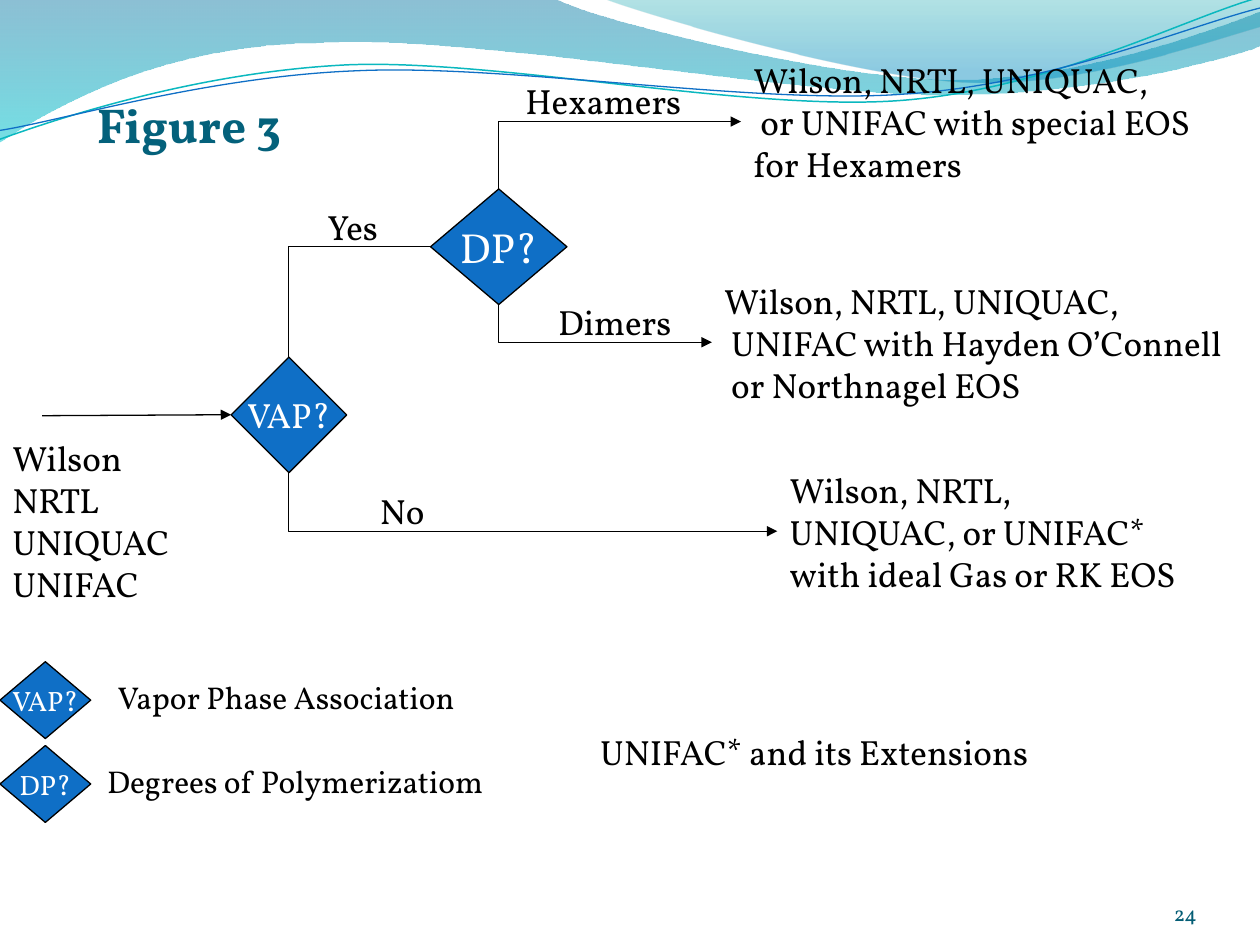
from lxml.etree import SubElement
from pptx import Presentation
from pptx.dml.color import RGBColor
from pptx.enum.shapes import MSO_CONNECTOR, MSO_SHAPE
from pptx.enum.text import MSO_ANCHOR, MSO_AUTO_SIZE, PP_ALIGN
from pptx.oxml.ns import qn
from pptx.util import Cm, Pt

FONT = "Vollkorn"
BLACK, WHITE, BLUE = "000000", "FFFFFF", "0F6FC6"
HUNDREDTH_INCH = Cm(0.0254)
WAVE_TILT = 357.3

# Outlines in hundredths of an inch: a start point, then lines (x, y)
# or cubic curves (two control points and an end point).
BANDS = [
    ([(0, -1), (440, -1), (476, 17, 664, 63, 758, 63),
      (853, 63, 958, 26, 1000, 9), (1001, 36),
      (983, 44, 870, 76, 746, 75), (622, 75, 382, 28, 257, 34),
      (129, 35, 46, 83, -1, 113)],
     [(0, "0074A1", 45), (1, "00C6CF", 55)]),
    ([(479, -1), (509, 11, 682, 62, 769, 65),
      (856, 69, 961, 32, 1000, 21), (1000, 0)],
     [(0, "00A1A9", 30), (0.8, "008BBF", 45)]),
]
WAVES = [  # outline before tilting, colour, line width
    ([(-2, 87), (47, 72, 158, 41, 277, 41), (396, 42, 591, 93, 712, 90),
      (832, 87, 940, 36, 1000, 22)], "0AB8BF", 0.85),
    ([(-2, 80), (46, 75, 164, 45, 283, 46), (403, 46, 596, 88, 716, 85),
      (835, 83, 942, 42, 1002, 30)], BLUE, 0.75),
]

DECISIONS = [  # text, left, top, width, height, size
    ("VAP?", 4.66, 7.2, 2.33, 2.33, 20),
    ("DP?", 8.68, 3.81, 2.75, 2.33, 24),
    ("VAP?", 0, 13.34, 1.83, 1.55, 16),
    ("DP?", 0, 15.03, 1.83, 1.55, 16),
]
BRANCHES = [  # start, end, has arrowhead
    ((5.82, 7.2), (8.68, 4.97), False),
    ((5.82, 9.53), (15.67, 10.71), True),
    ((10.05, 3.81), (14.94, 2.45), True),
    ((10.05, 6.14), (14.35, 6.9), True),
]
LABELS = [  # lines, left, top, width, size
    (["Yes"], 6.35, 4.02, 1.7, 20),
    (["No"], 7.41, 9.74, 1.45, 20),
    (["Hexamers"], 10.34, 1.48, 3.84, 20),
    (["Dimers"], 11, 5.93, 2.84, 20),
    (["Wilson", "NRTL", "UNIQUAC", "UNIFAC"], 0, 8.68, 4.06, 20),
    (["Wilson, NRTL,", "UNIQUAC, or UNIFAC*", "with ideal Gas or RK EOS"],
     15.67, 9.31, 8.81, 20),
    (["Wilson, NRTL, UNIQUAC,", " UNIFAC with Hayden O’Connell",
      " or Northnagel EOS"], 14.35, 5.5, 11.05, 20),
    (["Wilson, NRTL, UNIQUAC,", " or UNIFAC with special EOS",
      "for Hexamers"], 14.94, 1.06, 10.46, 20),
    (["Vapor Phase Association"], 2.12, 13.55, 7.67, 18),
    (["Degrees of Polymerizatiom"], 1.91, 15.24, 8.46, 18),
    (["UNIFAC* and its Extensions"], 11.85, 14.61, 10.16, 20),
]


def color(value):
    return RGBColor.from_string(value)


def apply(target, values):
    for name, value in values.items():
        setattr(target, name, value)


def set_line(line, value, width=0.75):
    line.color.rgb = color(value)
    line.width = Pt(width)


def write_text(shape, lines, size, value, frame_format, bold=False, **paragraph_format):
    frame = shape.text_frame
    frame.text = "\n".join(lines)
    apply(frame, frame_format)
    for paragraph in frame.paragraphs:
        apply(paragraph, paragraph_format)
        for run in paragraph.runs:
            apply(run.font, {"name": FONT, "size": Pt(size), "bold": bold})
            run.font.color.rgb = color(value)


def add_outline(slide, outline, close):
    """Build the outline through its control points, then join these into curves."""
    start, *segments = outline
    points = [segment[index:index + 2]
              for segment in segments for index in range(0, len(segment), 2)]
    builder = slide.shapes.build_freeform(*start, scale=HUNDREDTH_INCH)
    builder.add_line_segments(points, close=close)
    shape = builder.convert_to_shape()
    shape.shadow.inherit = False
    steps = iter(list(shape._element.iter(qn("a:lnTo"))))
    for segment in segments:
        first = next(steps)
        if len(segment) == 6:
            curve = first.makeelement(qn("a:cubicBezTo"))
            first.addprevious(curve)
            for step in (first, next(steps), next(steps)):
                curve.append(step[0])
                step.getparent().remove(step)
    return shape


def add_band(slide, outline, stops):
    shape = add_outline(slide, outline, True)
    shape.line.fill.background()
    shape.fill.gradient()
    shape.fill.gradient_angle = 270
    for stop, (position, value, _) in zip(shape.fill.gradient_stops, stops):
        stop.position = position
        stop.color.rgb = color(value)
    swatches = shape._element.spPr.iter(qn("a:srgbClr"))
    for swatch, (_, _, opacity) in zip(swatches, stops):
        SubElement(swatch, qn("a:alpha"), val=str(opacity * 1000))


def add_wave(slide, outline, value, width):
    shape = add_outline(slide, outline, False)
    shape.rotation = WAVE_TILT
    shape.fill.background()
    set_line(shape.line, value, width)


def add_decision(slide, text, left, top, width, height, size):
    shape = slide.shapes.add_shape(
        MSO_SHAPE.FLOWCHART_DECISION, Cm(left), Cm(top), Cm(width), Cm(height))
    shape.shadow.inherit = False
    shape.fill.solid()
    shape.fill.fore_color.rgb = color(BLUE)
    set_line(shape.line, BLACK)
    write_text(shape, [text], size, WHITE,
               {"word_wrap": False, "vertical_anchor": MSO_ANCHOR.MIDDLE},
               alignment=PP_ALIGN.CENTER)


def add_line(slide, kind, start, end, arrow):
    connector = slide.shapes.add_connector(kind, *map(Cm, start + end))
    set_line(connector.line, BLACK)
    if arrow:
        SubElement(connector.line._ln, qn("a:tailEnd"), type="triangle")
    SubElement(connector._element.spPr, qn("a:effectLst"))
    return connector


def add_branch(slide, start, end, arrow):
    """Draw a one-bend connector that runs vertically, then horizontally."""
    (x1, y1), (x2, y2) = start, end
    middle_x, middle_y = (x1 + x2) / 2, (y1 + y2) / 2
    half_rise, half_run = (y2 - y1) / 2, (x2 - x1) / 2
    # The box is laid out before its quarter turn, so rise and run swap.
    connector = add_line(slide, MSO_CONNECTOR.ELBOW,
                         (middle_x + half_rise, middle_y - half_run),
                         (middle_x - half_rise, middle_y + half_run), arrow)
    properties = connector._element.spPr
    properties.find(qn("a:xfrm")).set("rot", str(270 * 60000))
    properties.find(qn("a:prstGeom")).set("prst", "bentConnector2")


def add_text_box(slide, left, top, width, height):
    return slide.shapes.add_textbox(Cm(left), Cm(top), Cm(width), Cm(height))


def add_label(slide, lines, left, top, width, size):
    height = 0.26 + len(lines) * Pt(size).cm * 1.2
    write_text(add_text_box(slide, left, top, width, height), lines, size, BLACK,
               {"word_wrap": False, "auto_size": MSO_AUTO_SIZE.SHAPE_TO_FIT_TEXT})


def main():
    presentation = Presentation()
    apply(presentation, {"slide_width": Cm(25.4), "slide_height": Cm(19.05)})
    slide = presentation.slides.add_slide(presentation.slide_layouts[6])
    for band in BANDS:
        add_band(slide, *band)
    for wave in WAVES:
        add_wave(slide, *wave)
    for decision in DECISIONS:
        add_decision(slide, *decision)
    add_line(slide, MSO_CONNECTOR.STRAIGHT, (0.85, 8.38), (4.66, 8.36), True)
    for branch in BRANCHES:
        add_branch(slide, *branch)
    for label in LABELS:
        add_label(slide, *label)
    write_text(add_text_box(slide, 0, 1.48, 7.62, 2.33), ["Figure 3"], 28, "04617B",
               {"word_wrap": True, "vertical_anchor": MSO_ANCHOR.MIDDLE},
               bold=True, alignment=PP_ALIGN.CENTER, line_spacing=0.7)
    margins = dict.fromkeys(
        ["margin_left", "margin_top", "margin_right", "margin_bottom"], 0)
    write_text(add_text_box(slide, 22.01, 17.65, 2.12, 1.02), ["24"], 12, "045D75",
               {"word_wrap": True, "vertical_anchor": MSO_ANCHOR.BOTTOM, **margins},
               alignment=PP_ALIGN.RIGHT)
    presentation.save("out.pptx")


if __name__ == "__main__":
    main()
